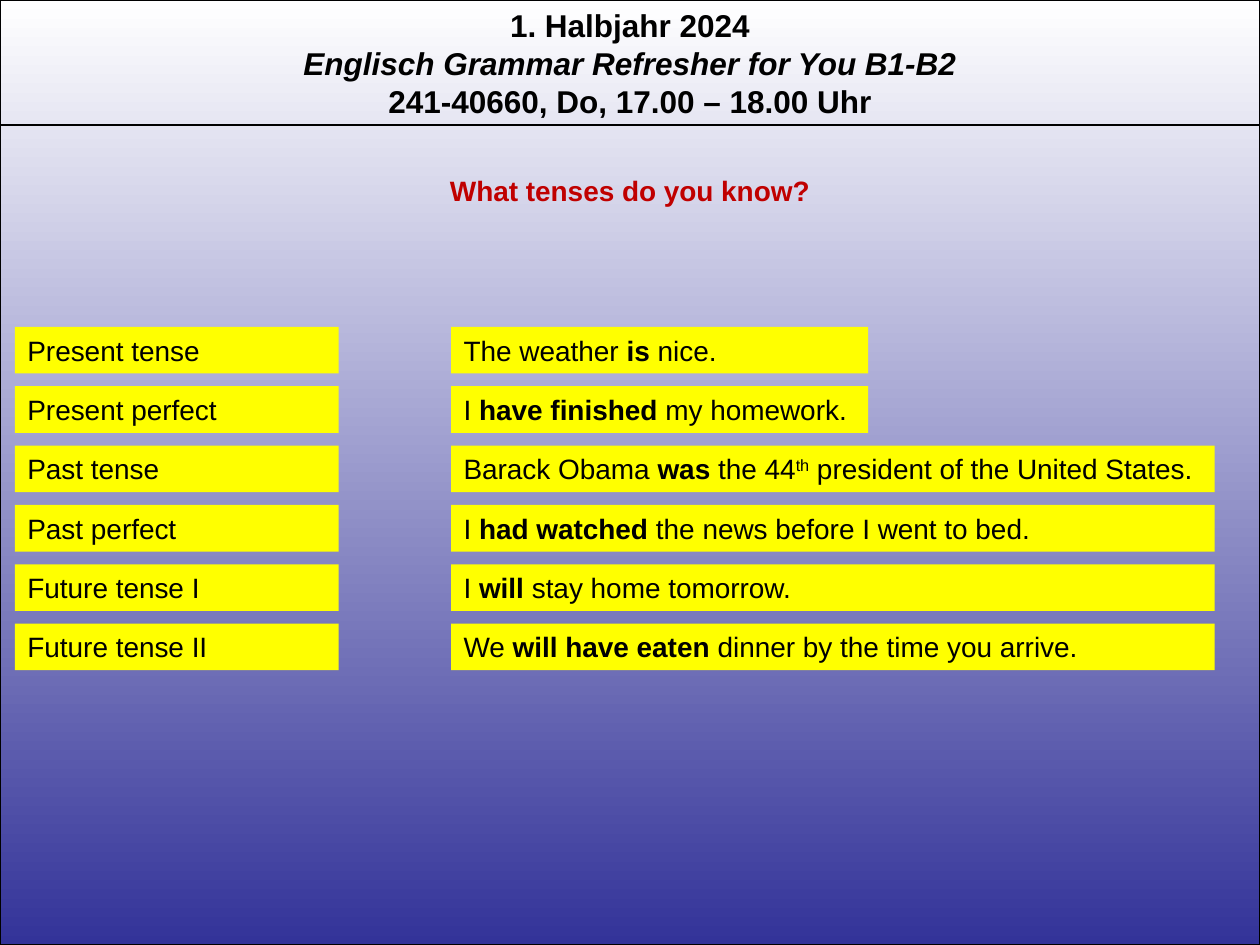
from pptx import Presentation
from pptx.dml.color import RGBColor
from pptx.enum.shapes import MSO_CONNECTOR as CONN, MSO_SHAPE as SHAPE
from pptx.enum.text import MSO_ANCHOR as ANCHOR, MSO_AUTO_SIZE as AUTO, PP_ALIGN as ALIGN
from pptx.oxml.ns import qn
from pptx.util import Pt
from lxml import etree

BLACK = RGBColor(0x00, 0x00, 0x00)
WHITE = RGBColor(0xFF, 0xFF, 0xFF)
INDIGO = RGBColor(0x33, 0x33, 0x99)
RED = RGBColor(0xC0, 0x00, 0x00)
YELLOW = RGBColor(0xFF, 0xFF, 0x00)

WIDTH, HEIGHT = 720, 540
ROW_TOP, ROW_STEP, ROW_HEIGHT = 186.8, 33.92, 26.64
TENSE_LEFT, TENSE_WIDTH = 8.6, 185
EXAMPLE_LEFT, SHORT, LONG = 257.8, 238.3, 436.3

HEADER = [
    ("1. Halbjahr 2024", False),
    ("Englisch Grammar Refresher for You B1-B2", True),
    ("241-40660, Do, 17.00 – 18.00 Uhr", False),
]
ROWS = [
    ("Present tense", SHORT, [("The weather ", ""), ("is", "bold"), (" nice.", "")]),
    ("Present perfect", SHORT, [("I ", ""), ("have finished ", "bold"), ("my homework.", "")]),
    ("Past tense", LONG, [("Barack Obama ", ""), ("was", "bold"), (" the 44", ""), ("th", "super"),
                          (" president of the United States.", "")]),
    ("Past perfect", LONG, [("I ", ""), ("had watched ", "bold"),
                            ("the news before I went to bed.", "")]),
    ("Future tense I", LONG, [("I ", ""), ("will ", "bold"), ("stay home tomorrow.", "")]),
    ("Future tense II", LONG, [("We ", ""), ("will have eaten ", "bold"),
                               ("dinner by the time you arrive.", "")]),
]


def add_run(p, text, size, color, bold=False, italic=False):
    r = p.add_run()
    r.text = text
    r.font.name = "Arial"
    r.font.size = Pt(size)
    r.font.bold = bold
    r.font.italic = italic
    r.font.color.rgb = color
    return r


def add_box(left, top, width, height):
    sp = s.shapes.add_textbox(Pt(left), Pt(top), Pt(width), Pt(height))
    tf = sp.text_frame
    tf.word_wrap = True
    tf.auto_size = AUTO.SHAPE_TO_FIT_TEXT
    tf.vertical_anchor = ANCHOR.TOP
    return sp


prs = Presentation()
prs.slide_width, prs.slide_height = Pt(WIDTH), Pt(HEIGHT)
s = prs.slides.add_slide(prs.slide_layouts[6])

backdrop = s.shapes.add_shape(SHAPE.RECTANGLE, 0, 0, Pt(WIDTH), Pt(HEIGHT))
backdrop.shadow.inherit = False
backdrop.fill.gradient()
backdrop.fill.gradient_angle = 270
for stop, color, position in zip(backdrop.fill.gradient_stops, (WHITE, INDIGO), (0, 1)):
    stop.color.rgb = color
    stop.position = position
backdrop.line.color.rgb = BLACK
backdrop.line.width = Pt(0.75)

tf = add_box(0, 0, WIDTH, 72.7).text_frame
for i, (text, italic) in enumerate(HEADER):
    p = tf.add_paragraph() if i else tf.paragraphs[0]
    p.alignment = ALIGN.CENTER
    add_run(p, text, 18, BLACK, bold=True, italic=italic)

rule = s.shapes.add_connector(CONN.STRAIGHT, 0, Pt(71.4), Pt(WIDTH), Pt(71.4))
rule.line.color.rgb = BLACK
rule.line.width = Pt(0.75)
etree.SubElement(rule._element.spPr, qn("a:effectLst"))

p = add_box(0, 95.8, WIDTH, ROW_HEIGHT).text_frame.paragraphs[0]
p.alignment = ALIGN.CENTER
add_run(p, "What tenses do you know?", 16, RED, bold=True)

for i, (tense, width, example) in enumerate(ROWS):
    top = ROW_TOP + i * ROW_STEP
    cells = [(TENSE_LEFT, TENSE_WIDTH, [(tense, "")]), (EXAMPLE_LEFT, width, example)]
    for left, cell_width, runs in cells:
        sp = add_box(left, top, cell_width, ROW_HEIGHT)
        sp.fill.solid()
        sp.fill.fore_color.rgb = YELLOW
        for text, style in runs:
            r = add_run(sp.text_frame.paragraphs[0], text, 16, BLACK, bold=style == "bold")
            if style == "super":
                r._r.get_or_add_rPr().set("baseline", "30000")

prs.save("out.pptx")
